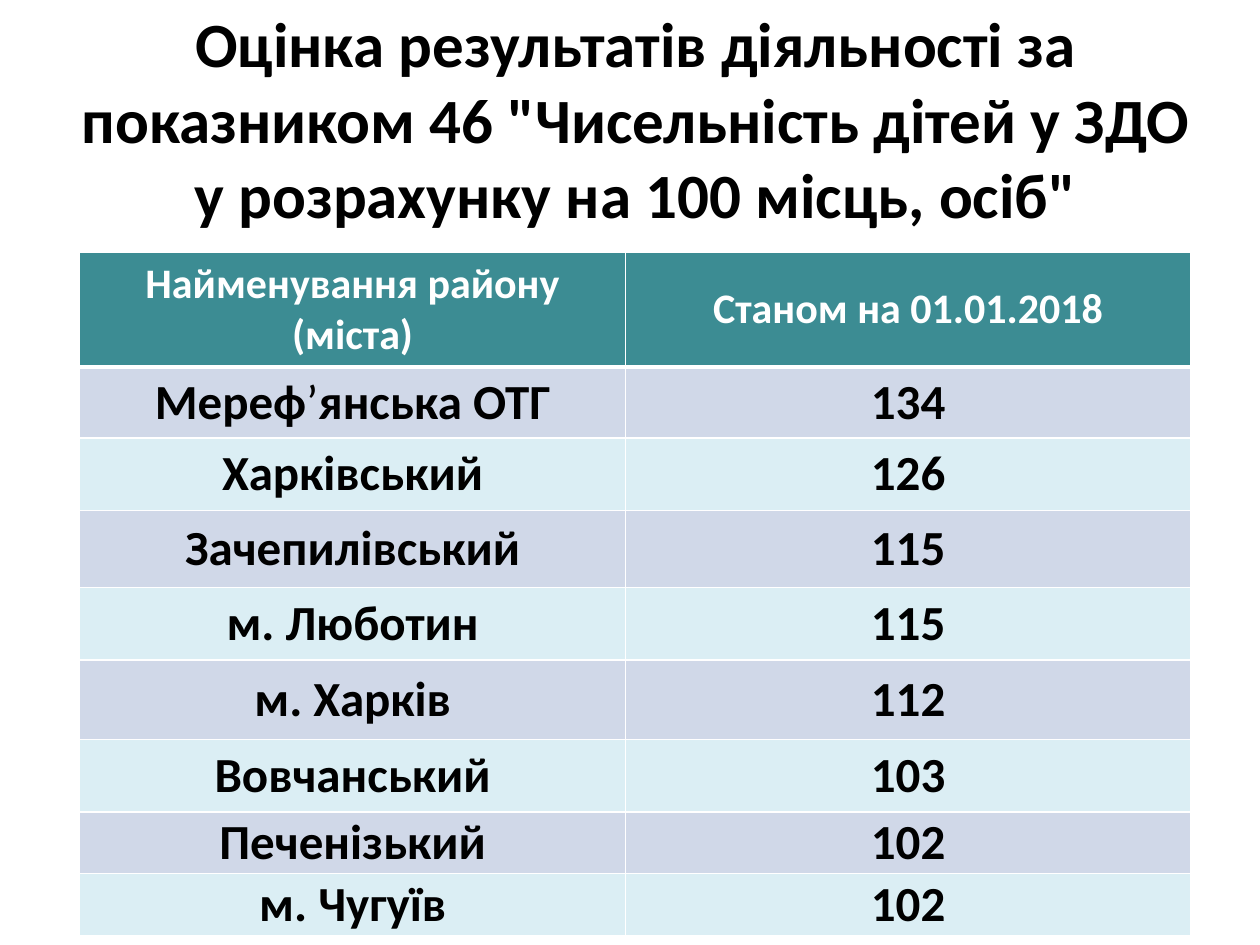
from lxml import etree
from pptx import Presentation
from pptx.dml.color import RGBColor
from pptx.enum import text
from pptx.oxml import ns
from pptx.util import Pt

COLORS = {"ink": "000000", "white": "FFFFFF", "header": "3C8C93",
          "odd": "D0D8E8", "even": "DBEEF4"}
TITLE = 'Оцінка результатів діяльності за показником 46 "Чисельність дітей у ЗДО у розрахунку на 100 місць, осіб"'
HEADER = (["Найменування району", "(міста)"], ["Станом на 01.01.2018"])
DISTRICTS = [("Мереф’янська ОТГ", 134), ("Харківський", 126),
             ("Зачепилівський", 115), ("м. Люботин", 115), ("м. Харків", 112),
             ("Вовчанський", 103), ("Печенізький", 102), ("м. Чугуїв", 102)]
COLUMN_WIDTHS = (312, 323)
ROW_HEIGHTS = (65.8, 40.5, 41.4, 44, 41.4, 45.5, 41.4, 35.3, 35.3)
ROOMY = {"margin_left": Pt(7.2), "margin_right": Pt(7.2),
         "margin_top": Pt(3.6), "margin_bottom": Pt(3.6)}
TIGHT = {"margin_left": Pt(5), "margin_right": Pt(5),
         "margin_top": Pt(0), "margin_bottom": Pt(0)}


def rgb(name):
    return RGBColor.from_string(COLORS[name])


def set_all(target, values):
    for name, value in values.items():
        setattr(target, name, value)


def add_run(p, words, size, color, bold=True):
    r = p.add_run()
    r.text = words
    set_all(r.font, {"name": "Calibri", "size": Pt(size), "bold": bold})
    r.font.color.rgb = rgb(color)


def write_lines(tf, lines, size, color):
    for i, line in enumerate(lines):
        p = tf.paragraphs[0] if i == 0 else tf.add_paragraph()
        p.alignment = text.PP_ALIGN.CENTER
        before, mark, after = line.partition("’")
        for words, bold in ((before, True), (mark, False), (after, True)):
            if words:
                add_run(p, words, size, color, bold)


def add_borders(cell, top, bottom):
    props = cell._tc.get_or_add_tcPr()
    sides = (("lnL", 1), ("lnR", 1), ("lnT", top), ("lnB", bottom))
    for i, (side, width) in enumerate(sides):
        line = etree.Element(ns.qn(f"a:{side}"), w=str(Pt(width)))
        fill = etree.SubElement(line, ns.qn("a:solidFill"))
        etree.SubElement(fill, ns.qn("a:srgbClr"), val=COLORS["white"])
        props.insert(i, line)


def fill_cell(cell, lines, size, color, back, margins, top=1, bottom=1):
    set_all(cell, {"vertical_anchor": text.MSO_ANCHOR.MIDDLE, **margins})
    cell.fill.solid()
    cell.fill.fore_color.rgb = rgb(back)
    write_lines(cell.text_frame, lines, size, color)
    add_borders(cell, top, bottom)


def add_title(s, left, top, width, height):
    tf = s.shapes.add_textbox(Pt(left), Pt(top), Pt(width), Pt(height)).text_frame
    set_all(tf, {"word_wrap": True, "vertical_anchor": text.MSO_ANCHOR.MIDDLE})
    write_lines(tf, [TITLE], 36, "ink")


def add_district_table(s, left, top, width, height):
    table = s.shapes.add_table(len(ROW_HEIGHTS), len(COLUMN_WIDTHS), Pt(left),
                               Pt(top), Pt(width), Pt(height)).table
    for column, share in zip(table.columns, COLUMN_WIDTHS):
        column.width = Pt(width * share / sum(COLUMN_WIDTHS))
    for row, share in zip(table.rows, ROW_HEIGHTS):
        row.height = Pt(height * share / sum(ROW_HEIGHTS))
    for col, lines in enumerate(HEADER):
        fill_cell(table.cell(0, col), lines, 24, "white", "header", ROOMY, bottom=3)
    for row, (district, children) in enumerate(DISTRICTS, 1):
        back = "odd" if row % 2 else "even"
        top_line = 3 if row == 1 else 1
        name_margins = ROOMY if 2 <= row <= 6 else TIGHT
        fill_cell(table.cell(row, 0), [district], 28, "ink", back, name_margins, top_line)
        fill_cell(table.cell(row, 1), [str(children)], 28, "ink", back, TIGHT, top_line)


def main():
    prs = Presentation()
    set_all(prs, {"slide_width": Pt(720), "slide_height": Pt(540)})
    s = prs.slides.add_slide(prs.slide_layouts[6])
    add_title(s, 31, 6, 664.5, 123)
    add_district_table(s, 45.5, 144, sum(COLUMN_WIDTHS), sum(ROW_HEIGHTS))
    prs.save("out.pptx")


if __name__ == "__main__":
    main()
